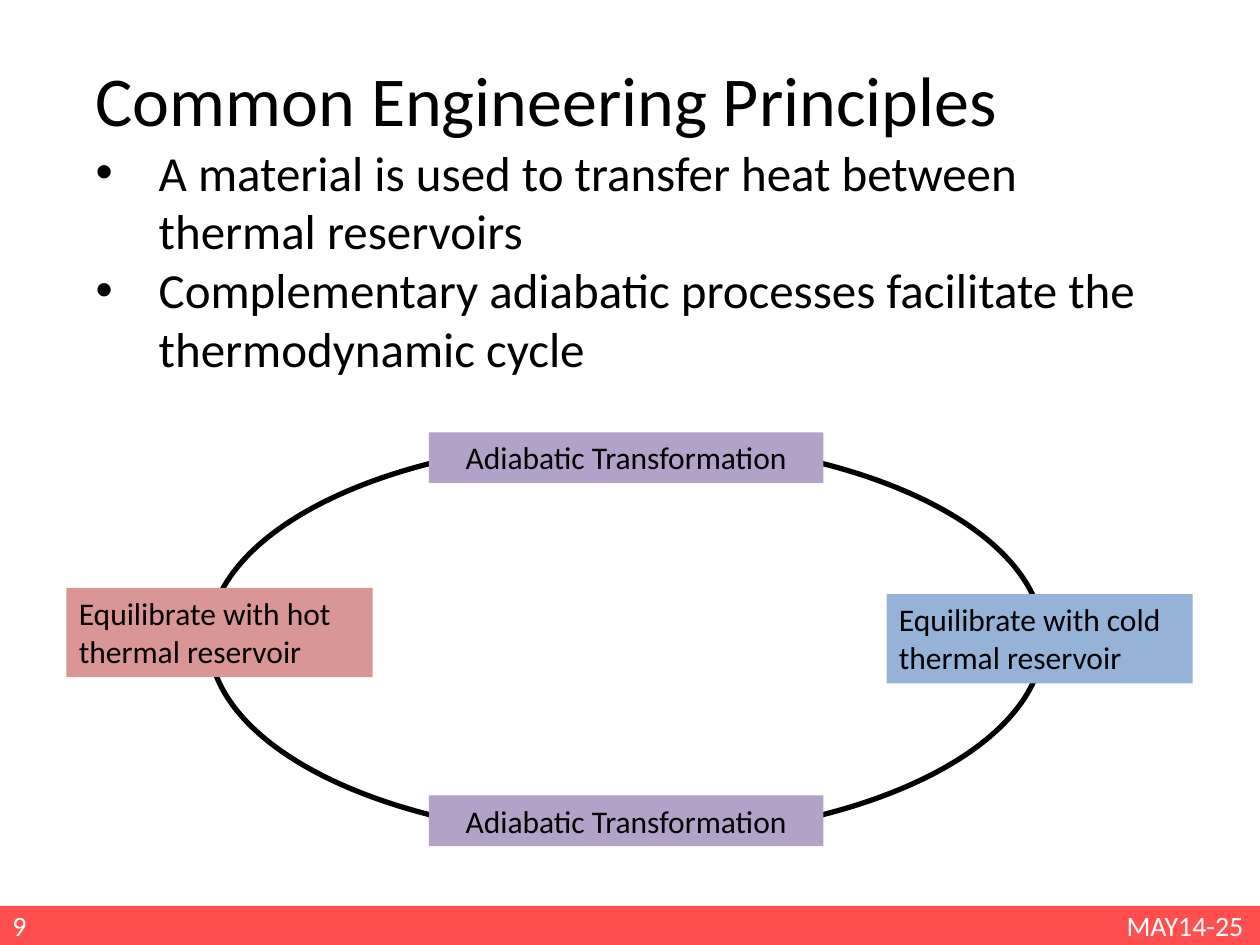
from pptx import Presentation
from pptx.dml.color import RGBColor
from pptx.enum.shapes import MSO_SHAPE
from pptx.enum.text import MSO_ANCHOR, MSO_AUTO_SIZE, PP_ALIGN
from pptx.oxml.ns import qn
from pptx.util import Pt
from lxml import etree

RECT, OVAL = MSO_SHAPE.RECTANGLE, MSO_SHAPE.OVAL
TOP, MIDDLE = MSO_ANCHOR.TOP, MSO_ANCHOR.MIDDLE
LEFT, CENTER = PP_ALIGN.LEFT, PP_ALIGN.CENTER
NO_FIT = MSO_AUTO_SIZE.NONE

FONT = "Calibri"
COLORS = {
    "bar": "FF4F4F",
    "hot": "D99694",
    "cold": "95B3D7",
    "adiabatic": "B3A2C7",
    "text": "000000",
    "light": "FFFFFF",
}


def color(name):
    return RGBColor.from_string(COLORS[name])


def write(sp, *lines, size=18, ink="text", align=LEFT, anchor=TOP, bullet=None):
    tf = sp.text_frame
    tf.word_wrap = True
    tf.auto_size = NO_FIT
    tf.vertical_anchor = anchor
    for i, line in enumerate(lines):
        p = tf.add_paragraph() if i else tf.paragraphs[0]
        p.alignment = align
        p.space_before = Pt(0)
        r = p.add_run()
        r.text = line
        r.font.name = FONT
        r.font.size = Pt(size)
        r.font.color.rgb = color(ink)
        if bullet:
            pPr = p._p.get_or_add_pPr()
            pPr.set("marL", str(Pt(36)))
            pPr.set("indent", str(-Pt(36)))
            etree.SubElement(pPr, qn("a:buChar")).set("char", bullet)


def place(sp, x, y, w, h):
    sp.left, sp.top, sp.width, sp.height = Pt(x), Pt(y), Pt(w), Pt(h)


def add_shape(s, kind, x, y, w, h, fill=None, line=None):
    sp = s.shapes.add_shape(kind, Pt(x), Pt(y), Pt(w), Pt(h))
    sp.shadow.inherit = False
    if fill:
        sp.fill.solid()
        sp.fill.fore_color.rgb = color(fill)
    else:
        sp.fill.background()
    if line:
        sp.line.color.rgb = color("text")
        sp.line.width = Pt(line)
    else:
        sp.line.fill.background()
    return sp


def add_footer(s, x, y, w, h):
    add_shape(s, RECT, x, y, w, h, fill="bar")
    date_w, number_w = 85.7, 34.6
    labels = [
        ("MAY14-25", x + w - date_w, date_w, CENTER),
        ("9", x, number_w, LEFT),
    ]
    for text, left, width, align in labels:
        sp = s.shapes.add_textbox(Pt(left), Pt(y), Pt(width), Pt(h))
        write(sp, text, size=16, ink="light", align=align, anchor=MIDDLE)


def add_content(s, x, y, w, h):
    title, body = s.placeholders
    title_h = 48.8
    place(title, x, y, w, title_h + 7.2)
    write(title, "Common Engineering Principles", size=40)
    place(body, x, y + title_h, w, h - title_h)
    write(
        body,
        "A material is used to transfer heat between thermal reservoirs",
        "Complementary adiabatic processes facilitate the thermodynamic cycle",
        size=28,
        bullet="•",
    )


def add_cycle(s, x, y, w, h):
    add_shape(s, OVAL, x, y, w, h, line=3)
    side_w, side_h = 175, 51
    step_w, step_h = 225.4, 29
    step_x = x + (w - step_w) / 2
    steps = [
        ("Equilibrate with hot thermal reservoir", "hot",
         x - 81.5, y + 84.5, side_w, side_h, LEFT),
        ("Equilibrate with cold thermal reservoir", "cold",
         x + w - 89.5, y + 88, side_w, side_h, LEFT),
        ("Adiabatic Transformation", "adiabatic",
         step_x, y + h - 24.5, step_w, step_h, CENTER),
        ("Adiabatic Transformation", "adiabatic",
         step_x, y - 4.5, step_w, step_h, CENTER),
    ]
    for text, fill, left, top, width, height, align in steps:
        sp = add_shape(s, RECT, left, top, width, height, fill=fill)
        write(sp, text, align=align)


def main():
    prs = Presentation()
    prs.slide_width, prs.slide_height = Pt(720), Pt(540)
    s = prs.slides.add_slide(prs.slide_layouts[1])
    add_footer(s, 0, 517.7, 720, 22.3)
    add_content(s, 47.5, 28.8, 620.6, 216)
    add_cycle(s, 119.5, 251.5, 476.6, 227.5)
    prs.save("out.pptx")


if __name__ == "__main__":
    main()
